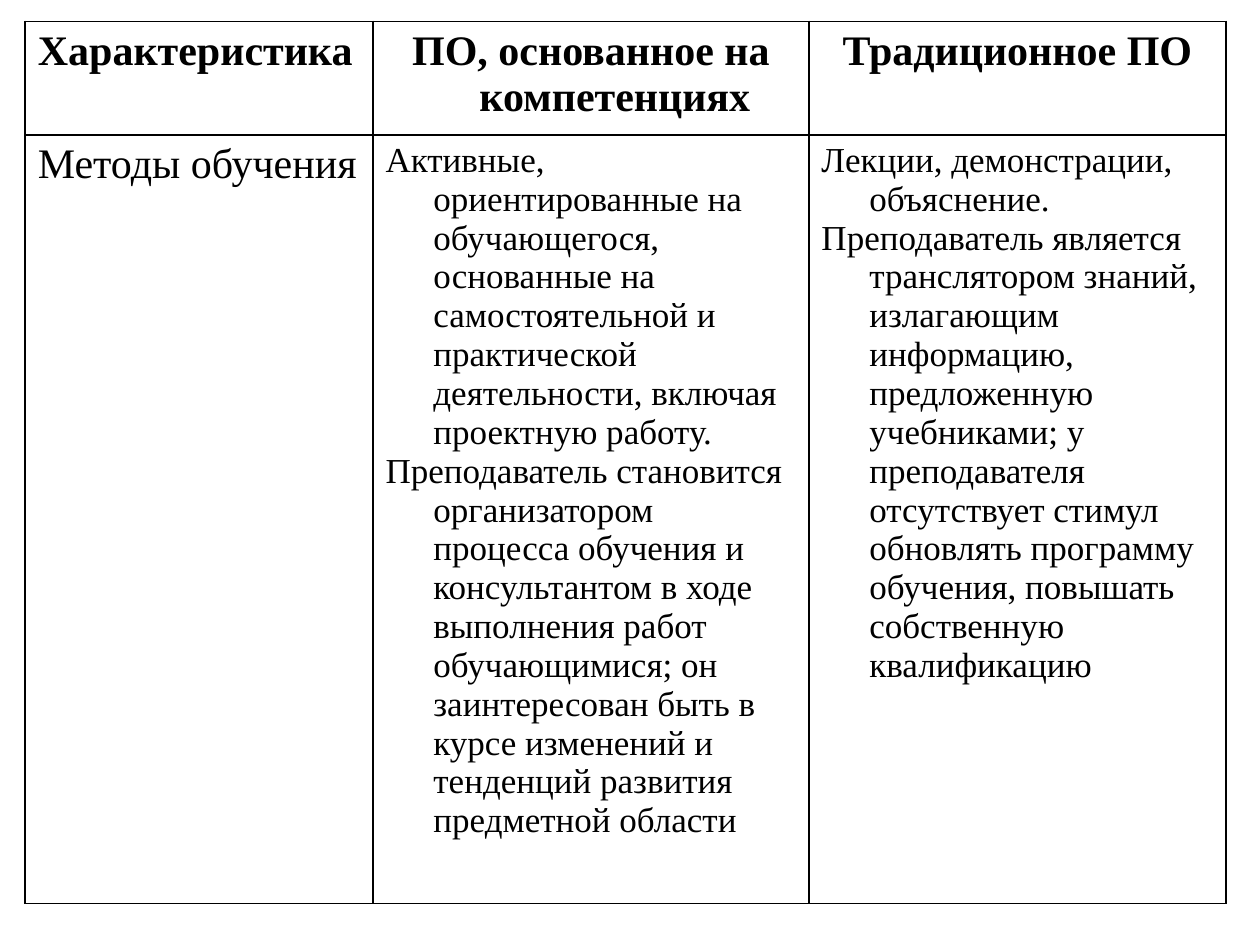
from dataclasses import dataclass

from lxml import etree
from pptx import Presentation
from pptx.dml.color import RGBColor
from pptx.enum.text import MSO_ANCHOR, PP_ALIGN
from pptx.oxml.ns import qn
from pptx.util import Inches, Pt

LEFT, CENTER, JUSTIFY = PP_ALIGN.LEFT, PP_ALIGN.CENTER, PP_ALIGN.JUSTIFY
TOP = MSO_ANCHOR.TOP
BORDER_TAGS = ("a:lnL", "a:lnR", "a:lnT", "a:lnB")


@dataclass(frozen=True)
class Theme:
    font: str = "Times New Roman"
    ink: str = "000000"
    paper: str = "FFFFFF"
    heading_size: int = 24
    body_size: int = 20
    border_width: int = 1
    hanging_indent: float = 0.38


@dataclass(frozen=True)
class CellText:
    paragraphs: tuple
    size: int
    alignment: int = LEFT
    bold: bool = False


class SlideBuilder:
    """Draws styled elements on the current slide."""

    def __init__(self, slide, theme):
        self.slide = slide
        self.theme = theme

    def background(self):
        fill = self.slide.background.fill
        fill.solid()
        fill.fore_color.rgb = RGBColor.from_string(self.theme.paper)

    def table(self, left, top, column_widths, row_heights, rows):
        shape = self.slide.shapes.add_table(
            len(row_heights), len(column_widths), Inches(left), Inches(top),
            Inches(sum(column_widths)), Inches(sum(row_heights)))
        table = shape.table
        table.first_row = table.horz_banding = False
        for column, width in zip(table.columns, column_widths):
            column.width = Inches(width)
        for row, height, texts in zip(table.rows, row_heights, rows):
            row.height = Inches(height)
            for cell, text in zip(row.cells, texts):
                self.cell(cell, text)

    def cell(self, cell, text):
        cell.margin_left = cell.margin_right = Inches(0.1)
        cell.margin_top = cell.margin_bottom = Inches(0.05)
        cell.vertical_anchor = TOP
        cell.fill.solid()
        cell.fill.fore_color.rgb = RGBColor.from_string(self.theme.paper)
        self.borders(cell)
        frame = cell.text_frame
        for index, content in enumerate(text.paragraphs):
            paragraph = frame.add_paragraph() if index else frame.paragraphs[0]
            self.paragraph(paragraph, content, text)

    def paragraph(self, paragraph, content, style):
        paragraph.alignment = style.alignment
        indent = Inches(self.theme.hanging_indent)
        properties = paragraph._p.get_or_add_pPr()
        properties.set("marL", str(indent))
        properties.set("indent", str(-indent))
        run = paragraph.add_run()
        run.text = content
        run.font.name = self.theme.font
        run.font.size = Pt(style.size)
        run.font.bold = style.bold
        run.font.color.rgb = RGBColor.from_string(self.theme.ink)

    def borders(self, cell):
        properties = cell._tc.get_or_add_tcPr()
        for index, tag in enumerate(BORDER_TAGS):
            line = etree.Element(qn(tag), w=str(Pt(self.theme.border_width)))
            fill = etree.SubElement(line, qn("a:solidFill"))
            etree.SubElement(fill, qn("a:srgbClr"), val=self.theme.ink)
            properties.insert(index, line)


def main():
    theme = Theme()
    presentation = Presentation()
    presentation.slide_width = Inches(10)
    presentation.slide_height = Inches(7.5)
    slide = presentation.slides.add_slide(presentation.slide_layouts[6])
    builder = SlideBuilder(slide, theme)
    builder.background()

    header = (
        CellText(("Характеристика ",), theme.heading_size, JUSTIFY, True),
        CellText(("ПО, основанное на компетенциях",), theme.heading_size, CENTER, True),
        CellText(("Традиционное ПО",), theme.heading_size, CENTER, True),
    )
    teaching_methods = (
        CellText(("Методы обучения",), theme.heading_size, JUSTIFY),
        CellText((
            "Активные, ориентированные на обучающегося, основанные на "
            "самостоятельной и практической деятельности, включая проектную работу.",
            "Преподаватель становится организатором процесса обучения и "
            "консультантом в ходе выполнения работ обучающимися; он заинтересован "
            "быть в курсе изменений и тенденций развития предметной области",
        ), theme.body_size),
        CellText((
            "Лекции, демонстрации, объяснение.",
            "Преподаватель является транслятором знаний, излагающим информацию, "
            "предложенную учебниками; у преподавателя отсутствует стимул обновлять "
            "программу обучения, повышать собственную квалификацию",
        ), theme.body_size),
    )
    builder.table(0.2, 0.17, (2.76, 3.46, 3.31), (0.9, 6.1), (header, teaching_methods))
    presentation.save("out.pptx")


if __name__ == "__main__":
    main()
